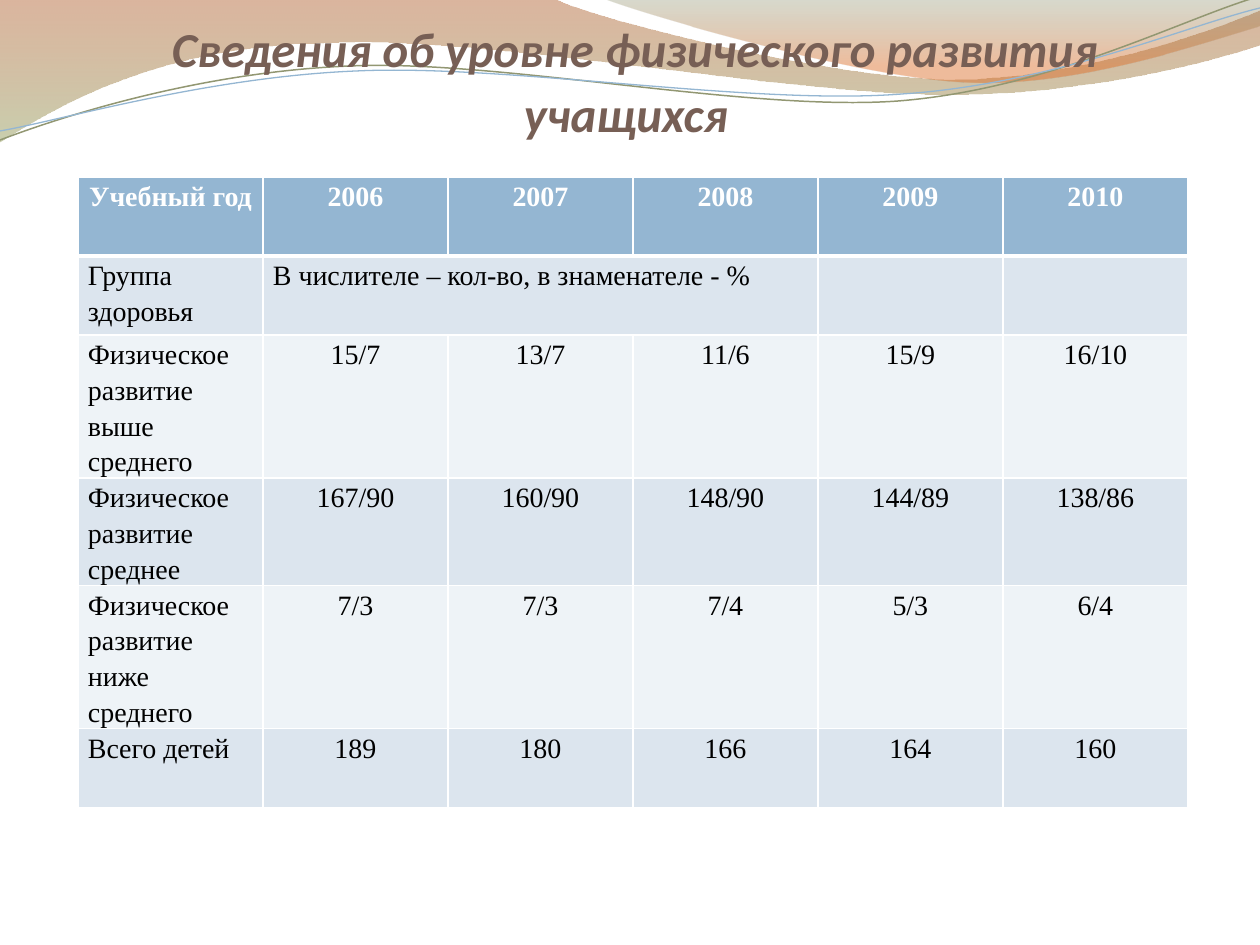
from dataclasses import dataclass

from lxml.etree import SubElement
from pptx import Presentation
from pptx.dml.color import RGBColor
from pptx.enum.text import MSO_ANCHOR as Anchor, MSO_AUTO_SIZE as AutoSize, PP_ALIGN as Align
from pptx.oxml.ns import qn
from pptx.util import Emu, Pt

PX = 914400 / 126

COLORS = {
    "white": "FFFFFF",
    "black": "000000",
    "title": "775F55",
    "header": "94B6D2",
    "band_dark": "DCE5EE",
    "band_light": "EEF3F7",
    "rust": "AF5C29",
    "olive": "9DA66B",
    "moss": "7D835B",
    "orange": "DD6B24",
    "line_green": "929772",
    "line_blue": "94B6D2",
}


@dataclass(frozen=True)
class Stop:
    position: float
    color: str
    opacity: int


@dataclass(frozen=True)
class Wave:
    start: tuple
    segments: list
    stops: tuple = ()
    line: str = ""
    width: float = 0


@dataclass(frozen=True)
class Row:
    height: int
    cells: list


WAVES = [
    Wave(
        (0, 0),
        [
            (554, -1),
            (600, 21, 837, 79, 955, 79),
            (1075, 79, 1207, 33, 1260, 11),
            (1261, 45),
            (1231, 55, 1096, 96, 940, 94),
            (784, 94, 481, 35, 324, 43),
            (163, 45, 58, 105, -1, 142),
        ],
        stops=(Stop(0, "rust", 45), Stop(1, "olive", 55)),
    ),
    Wave(
        (604, -1),
        [(641, 14, 859, 78, 969, 82), (1079, 87, 1211, 40, 1260, 26), (1260, 0)],
        stops=(Stop(0, "moss", 30), Stop(0.8, "orange", 45)),
    ),
    Wave(
        (0, 140),
        [(60, 117, 199, 72, 349, 66), (498, 59, 747, 112, 898, 101), (1050, 89, 1182, 19, 1257, -3)],
        line="line_green",
        width=0.85,
    ),
    Wave(
        (0, 131),
        [(59, 121, 207, 77, 357, 71), (508, 64, 752, 106, 903, 94), (1053, 84, 1186, 26, 1260, 8)],
        line="line_blue",
        width=0.75,
    ),
]

ROWS = [
    Row(79, ["Учебный год", "2006", "2007", "2008", "2009", "2010"]),
    Row(79, ["Группа здоровья", "В числителе – кол-во, в знаменателе - %", "", "", "", ""]),
    Row(135, ["Физическое развитие выше среднего", "15/7", "13/7", "11/6", "15/9", "16/10"]),
    Row(91, ["Физическое развитие среднее", "167/90", "160/90", "148/90", "144/89", "138/86"]),
    Row(135, ["Физическое развитие ниже среднего", "7/3", "7/3", "7/4", "5/3", "6/4"]),
    Row(79, ["Всего детей", "189", "180", "166", "164", "160"]),
]
COLUMN_WIDTH = 185
NOTE_ROW = 1


def px(value: float) -> Emu:
    return Emu(round(value * PX))


def rgb(name: str) -> RGBColor:
    return RGBColor.from_string(COLORS[name])


def bend_segments(shape, wave: Wave) -> None:
    straight = list(shape.element.spPr.iter(qn("a:lnTo")))
    for line, segment in zip(straight, wave.segments):
        if len(segment) == 2:
            continue
        line.clear()
        line.tag = qn("a:cubicBezTo")
        for x, y in zip(segment[::2], segment[1::2]):
            SubElement(line, qn("a:pt"), x=str(px(x) - shape.left), y=str(px(y) - shape.top))


def draw_wave(page, wave: Wave) -> None:
    builder = page.shapes.build_freeform(px(wave.start[0]), px(wave.start[1]), scale=1.0)
    ends = [(px(segment[-2]), px(segment[-1])) for segment in wave.segments]
    builder.add_line_segments(ends, close=bool(wave.stops))
    shape = builder.convert_to_shape()
    curve_shape = shape
    replace_lines(curve_shape, wave)
    shape.shadow.inherit = False
    if not wave.stops:
        shape.fill.background()
        shape.line.color.rgb = rgb(wave.line)
        shape.line.width = Pt(wave.width)
        return
    shape.line.fill.background()
    shape.fill.gradient()
    shape.fill.gradient_angle = 270
    for target, stop in zip(shape.fill.gradient_stops, wave.stops):
        target.position = stop.position
        target.color.rgb = rgb(stop.color)
    for color, stop in zip(shape.element.spPr.iter(qn("a:srgbClr")), wave.stops):
        SubElement(color, qn("a:alpha"), val=str(stop.opacity * 1000))


def replace_lines(shape, wave: Wave) -> None:
    bend_segments(shape, wave)


def format_title(page, text: str) -> None:
    title = page.shapes.title
    title.left, title.top, title.width, title.height = px(59), px(78), px(1134), px(158)
    frame = title.text_frame
    frame.text = text
    frame.word_wrap = True
    frame.auto_size = AutoSize.NONE
    frame.vertical_anchor = Anchor.BOTTOM
    frame.margin_left = frame.margin_right = frame.margin_top = 0
    frame.margin_bottom = px(94)
    para = frame.paragraphs[0]
    para.alignment = Align.CENTER
    para.line_spacing = Pt(37)
    para._p.get_or_add_pPr().set("indent", str(px(18)))
    font = para.runs[0].font
    font.name, font.size, font.bold, font.italic = "Calibri", Pt(27.9), True, True
    font.color.rgb = rgb("title")
    title.element.getparent().append(title.element)


def set_borders(cell, bottom: int) -> None:
    properties = cell._tc.get_or_add_tcPr()
    for index, (side, width) in enumerate((("L", 1), ("R", 1), ("T", 1), ("B", bottom))):
        line = SubElement(properties, qn(f"a:ln{side}"), w=str(Pt(width)))
        fill = SubElement(line, qn("a:solidFill"))
        SubElement(fill, qn("a:srgbClr"), val=COLORS["white"])
        properties.insert(index, line)


def format_cell(cell, text: str, fill: str, is_header: bool, align: Align) -> None:
    cell.fill.solid()
    cell.fill.fore_color.rgb = rgb(fill)
    cell.margin_left = cell.margin_right = px(10)
    cell.margin_top = cell.margin_bottom = 0
    set_borders(cell, 3 if is_header else 1)
    if not text:
        return
    cell.text_frame.text = text
    para = cell.text_frame.paragraphs[0]
    para.alignment = align
    para.line_spacing = 1.15
    para.space_after = Pt(10)
    font = para.runs[0].font
    font.name, font.size, font.bold = "Times New Roman", Pt(16), is_header
    font.color.rgb = rgb("white" if is_header else "black")


def draw_table(page, rows: list) -> None:
    count = len(rows[0].cells)
    height = sum(row.height for row in rows)
    frame = page.shapes.add_table(len(rows), count, px(78), px(177), px(COLUMN_WIDTH * count), px(height))
    table = frame.table
    table.horz_banding = False
    for column in table.columns:
        column.width = px(COLUMN_WIDTH)
    for r, row in enumerate(rows):
        table.rows[r].height = px(row.height)
        fill = "header" if r == 0 else "band_dark" if r % 2 else "band_light"
        for c, text in enumerate(row.cells):
            justified = r > 0 and (c == 0 or r == NOTE_ROW)
            align = Align.JUSTIFY if justified else Align.CENTER
            format_cell(table.cell(r, c), text, fill, r == 0, align)
    table.cell(NOTE_ROW, 1).merge(table.cell(NOTE_ROW, 3))


def main() -> None:
    deck = Presentation()
    deck.slide_width, deck.slide_height = px(1260), px(945)
    page = deck.slides.add_slide(deck.slide_layouts[5])
    for wave in WAVES:
        draw_wave(page, wave)
    format_title(page, "Сведения об уровне физического развития учащихся")
    draw_table(page, ROWS)
    deck.save("out.pptx")


if __name__ == "__main__":
    main()
